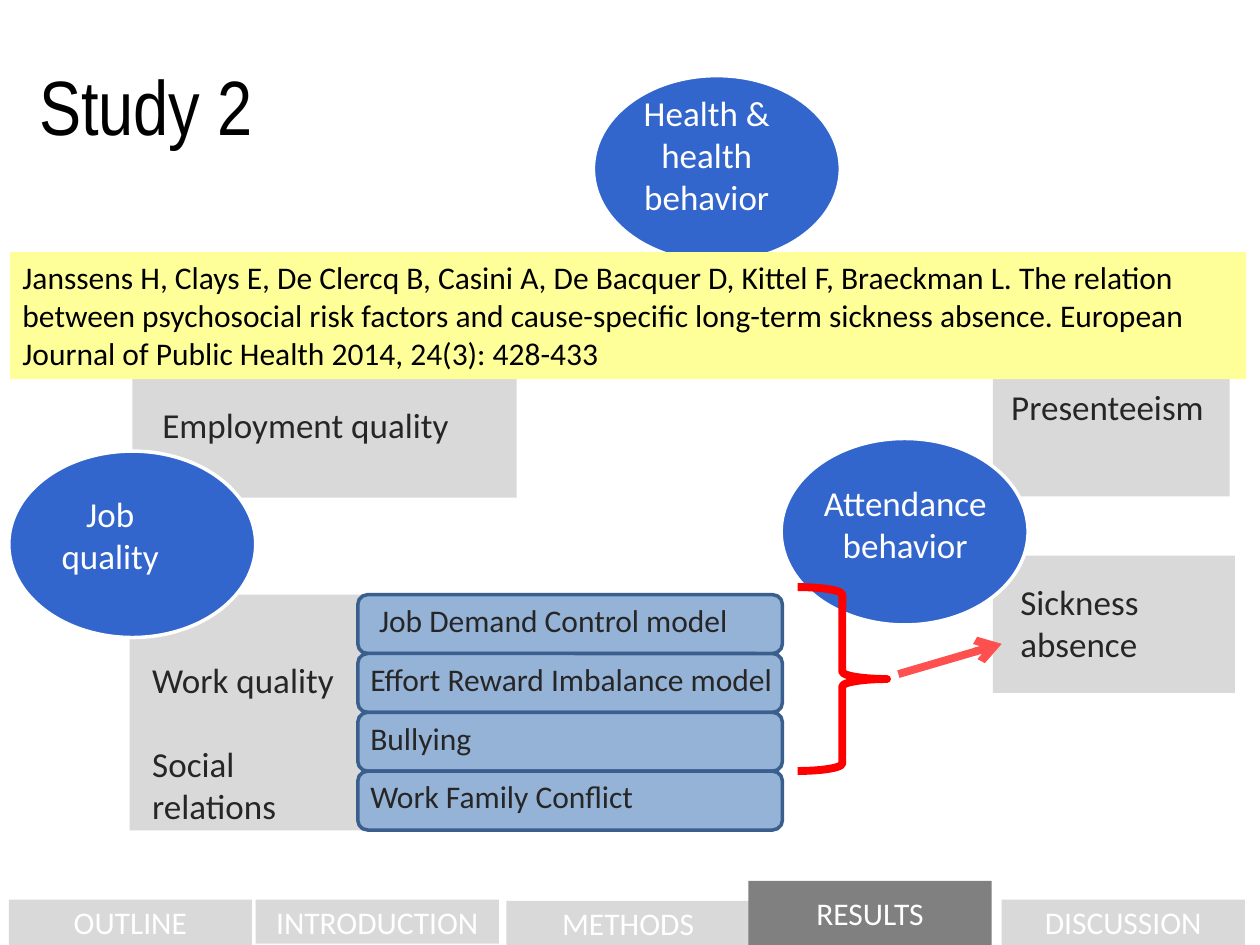
from dataclasses import dataclass

import lxml.etree
import pptx
import pptx.dml.color
import pptx.enum.shapes
import pptx.enum.text
import pptx.oxml.ns
import pptx.util

SHAPE = pptx.enum.shapes.MSO_SHAPE
ALIGN = pptx.enum.text.PP_ALIGN
ANCHOR = pptx.enum.text.MSO_ANCHOR

# The slide is a grid of 100 columns by 75 rows; areas are (left, top, width, height).
SLIDE_WIDTH = pptx.util.Inches(10)
SLIDE_HEIGHT = pptx.util.Inches(7.5)
COLUMN = SLIDE_WIDTH // 100
ROW = SLIDE_HEIGHT // 75


@dataclass(frozen=True)
class Theme:
    title_font: str = "Arial Narrow"
    body_font: str = "Calibri"
    title_size: int = 44
    label_size: int = 20
    small_size: int = 18
    black: str = "000000"
    dark: str = "262626"
    white: str = "FFFFFF"
    panel: str = "D9D9D9"
    active_tab: str = "808080"
    topic: str = "3366CC"
    model: str = "95B3D7"
    model_edge: str = "3A5F8C"
    citation: str = "FFFF99"
    brace: str = "FF0000"
    arrow: str = "FF5050"
    thin: float = 2
    thick: float = 4.5


THEME = Theme()


def rgb(color):
    return pptx.dml.color.RGBColor.from_string(color)


def place(area):
    left, top, width, height = area
    return [round(length) for length in
            (left * COLUMN, top * ROW, width * COLUMN, height * ROW)]


def write(para, text, size, color, font=THEME.body_font, align=ALIGN.LEFT):
    para.alignment = align
    span = para.add_run()
    span.text = text
    span.font.size = pptx.util.Pt(size)
    span.font.name = font
    span.font.color.rgb = rgb(color)


def add_title(slide, text, area):
    title = slide.shapes.title
    title.left, title.top, title.width, title.height = place(area)
    frame = title.text_frame
    frame.auto_size = pptx.enum.text.MSO_AUTO_SIZE.NONE
    frame.vertical_anchor = ANCHOR.MIDDLE
    write(frame.paragraphs[0], text, THEME.title_size, THEME.black, THEME.title_font)


def add_figure(slide, kind, area, fill=None, edge=None, weight=THEME.thin):
    figure = slide.shapes.add_shape(kind, *place(area))
    figure.shadow.inherit = False
    if fill:
        figure.fill.solid()
        figure.fill.fore_color.rgb = rgb(fill)
    else:
        figure.fill.background()
    if edge:
        figure.line.color.rgb = rgb(edge)
        figure.line.width = pptx.util.Pt(weight)
    else:
        figure.line.fill.background()
    return figure


def add_label(slide, lines, area, color=THEME.dark, size=THEME.label_size,
              align=ALIGN.LEFT):
    """Write each line as a paragraph and return the paragraphs."""
    frame = slide.shapes.add_textbox(*place(area)).text_frame
    frame.word_wrap = True
    for number, line in enumerate(lines):
        para = frame.add_paragraph() if number else frame.paragraphs[0]
        write(para, line, size, color, align=align)
    return frame.paragraphs


def add_topic(slide, text, left, top, label_area):
    add_figure(slide, SHAPE.OVAL, (left, top, 19.6, 14.8), THEME.topic, THEME.white)
    add_label(slide, [text], label_area, THEME.white, align=ALIGN.CENTER)


def add_model(slide, text, row, indent=0):
    top = 47.2 + row * 4.67
    add_figure(slide, SHAPE.ROUNDED_RECTANGLE, (28.4, top, 33.7, 4.67),
               THEME.model, THEME.model_edge)
    add_label(slide, [text], (28.4 + indent, top, 36.8, 4), size=THEME.small_size)


def add_tab(slide, text, left, top, bottom=75, fill=THEME.panel):
    tab = add_figure(slide, SHAPE.RECTANGLE, (left, top, 19.3, bottom - top), fill)
    tab.text_frame.vertical_anchor = ANCHOR.MIDDLE
    write(tab.text_frame.paragraphs[0], text, THEME.small_size, THEME.white,
          align=ALIGN.CENTER)


def add_citation(slide, text, area):
    band = add_figure(slide, SHAPE.RECTANGLE, area, THEME.citation)
    band.text_frame.word_wrap = True
    band.text_frame.vertical_anchor = ANCHOR.TOP
    write(band.text_frame.paragraphs[0], text, THEME.small_size, THEME.black)


def add_arrow(slide, start, end):
    points = place((*start, *end))
    arrow = slide.shapes.add_connector(
        pptx.enum.shapes.MSO_CONNECTOR.STRAIGHT, *points)
    arrow.line.color.rgb = rgb(THEME.arrow)
    arrow.line.width = pptx.util.Pt(THEME.thick)
    qn = pptx.oxml.ns.qn
    lxml.etree.SubElement(arrow.line._get_or_add_ln(), qn("a:tailEnd"), type="arrow")
    lxml.etree.SubElement(arrow._element.spPr, qn("a:effectLst"))


def main():
    deck = pptx.Presentation()
    deck.slide_width, deck.slide_height = SLIDE_WIDTH, SLIDE_HEIGHT
    page = deck.slides.add_slide(deck.slide_layouts.get_by_name("Title Only"))

    add_tab(page, "OUTLINE", 0.7, 71.4)
    add_tab(page, "INTRODUCTION", 20.3, 71.4, 74.9)
    add_tab(page, "METHODS", 40.2, 71.5)
    add_tab(page, "RESULTS", 59.4, 69.9, fill=THEME.active_tab)
    add_tab(page, "DISCUSSION", 79.5, 71.4)
    add_title(page, "Study 2", (2.1, 4.1, 90, 8.5))

    for area in ((10.3, 47.2, 45.4, 18.7), (10.5, 27.8, 30.5, 11.7),
                 (78.8, 28.5, 18.8, 10.9), (78.8, 44.1, 19.2, 10.9)):
        add_figure(page, SHAPE.RECTANGLE, area, THEME.panel)

    work_lines = add_label(page, ["Work quality", "Social", "relations"],
                           (11.1, 51.75, 29, 14.25))
    work_lines[1].space_before = pptx.util.Pt(24)
    add_label(page, ["Employment quality"], (11.9, 31.5, 34.5, 7.6))
    add_label(page, ["Presenteeism"], (77.7, 30.1, 20.4, 7.6), align=ALIGN.CENTER)
    add_label(page, ["Sickness absence"], (80, 45.6, 18, 11))

    add_model(page, "Job Demand Control model", 0, indent=0.7)
    for row, text in enumerate(("Effort Reward Imbalance model", "Bullying",
                                "Work Family Conflict"), start=1):
        add_model(page, text, row)

    add_topic(page, "Job quality", 0.7, 35.8, (2.5, 38.6, 12.5, 7.6))
    add_topic(page, "Attendance behavior", 62, 34.8, (63.7, 37.7, 16.3, 7.6))
    add_topic(page, "Health & health behavior", 47.1, 6, (47.1, 6.8, 18, 11))

    add_citation(page, "Janssens H, Clays E, De Clercq B, Casini A, De Bacquer D, "
                 "Kittel F, Braeckman L. The relation between psychosocial risk "
                 "factors and cause-specific long-term sickness absence. European "
                 "Journal of Public Health 2014, 24(3): 428-433",
                 (0.8, 20, 98.1, 10.1))
    add_arrow(page, (71.3, 53.5), (79.5, 51.1))
    add_figure(page, SHAPE.RIGHT_BRACE, (63.3, 46.6, 7.1, 14.6),
               edge=THEME.brace, weight=THEME.thick)
    deck.save("out.pptx")


if __name__ == "__main__":
    main()
